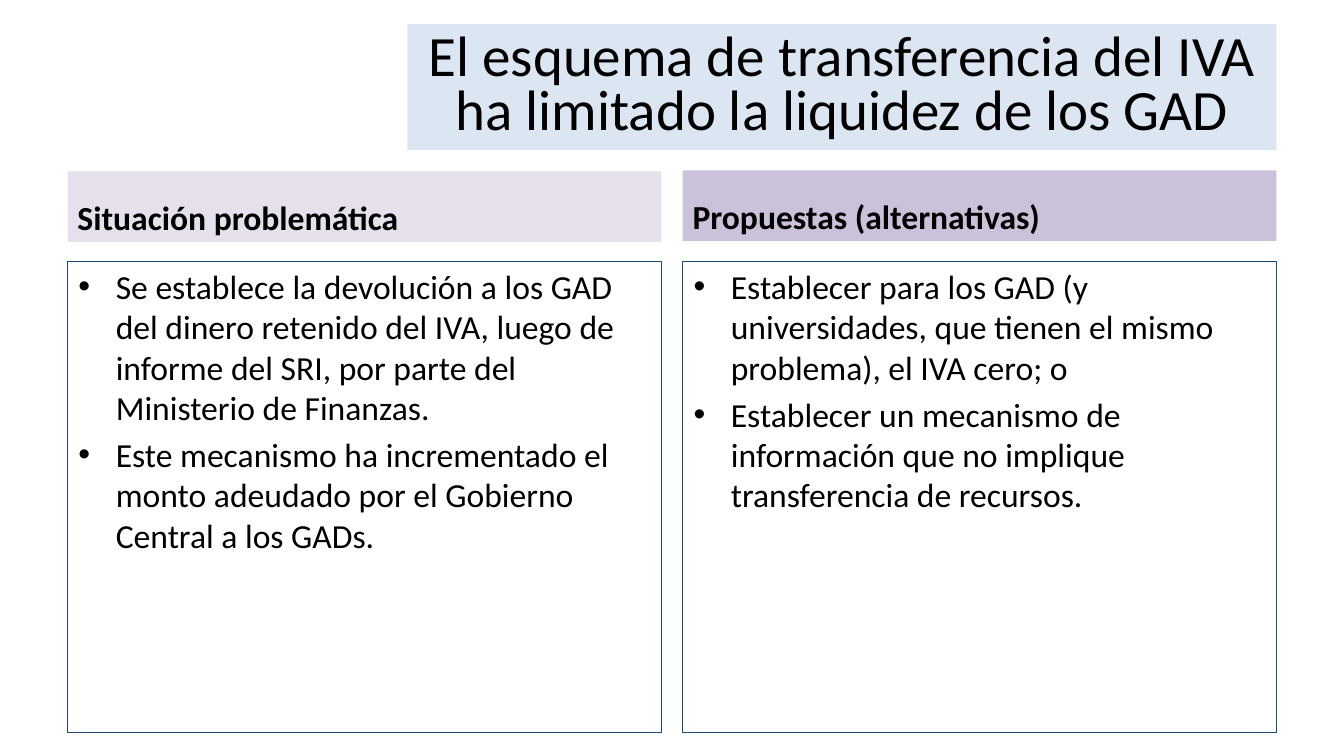
import pptx
import pptx.util
import pptx.dml.color
import pptx.enum.shapes
import pptx.enum.text
import lxml.etree
from dataclasses import dataclass

Inches = pptx.util.Inches
Pt = pptx.util.Pt
RGB = pptx.dml.color.RGBColor.from_string
Anchor = pptx.enum.text.MSO_ANCHOR
Align = pptx.enum.text.PP_ALIGN


@dataclass(frozen=True)
class Theme:
    font: str = "Calibri"
    text: str = "000000"
    title_fill: str = "DCE6F2"
    problem_fill: str = "E6E0EC"
    proposal_fill: str = "CCC1DA"
    border: str = "1F497D"
    title_size: float = 40.7
    body_size: float = 24
    gap: float = 4.8


class SlideBuilder:
    def __init__(self, slide, theme):
        self.s = slide
        self.theme = theme

    def run(self, p, text, size, bold=False):
        r = p.add_run()
        r.text = text
        r.font.name = self.theme.font
        r.font.size = Pt(size)
        r.font.bold = bold
        r.font.color.rgb = RGB(self.theme.text)

    def frame(self, sp, anchor):
        tf = sp.text_frame
        tf.word_wrap = True
        tf.auto_size = pptx.enum.text.MSO_AUTO_SIZE.NONE
        tf.vertical_anchor = anchor
        return tf

    def rectangle(self, left, top, width, height):
        sp = self.s.shapes.add_shape(
            pptx.enum.shapes.MSO_SHAPE.RECTANGLE,
            Inches(left), Inches(top), Inches(width), Inches(height))
        sp.shadow.inherit = False
        return sp

    def title(self, text, left, top, width, height):
        sp = self.s.shapes.title
        sp.left, sp.top = Inches(left), Inches(top)
        sp.width, sp.height = Inches(width), Inches(height)
        sp.fill.solid()
        sp.fill.fore_color.rgb = RGB(self.theme.title_fill)
        p = self.frame(sp, Anchor.MIDDLE).paragraphs[0]
        p.alignment = Align.CENTER
        p.line_spacing = 0.8
        self.run(p, text, self.theme.title_size)

    def heading(self, text, fill, left, top, width, height):
        sp = self.rectangle(left, top, width, height)
        sp.fill.solid()
        sp.fill.fore_color.rgb = RGB(fill)
        sp.line.fill.background()
        p = self.frame(sp, Anchor.BOTTOM).paragraphs[0]
        p.alignment = Align.LEFT
        self.run(p, text, self.theme.body_size, bold=True)

    def bullet(self, p):
        pPr = p._p.get_or_add_pPr()
        pPr.set("marL", str(Inches(0.38)))
        pPr.set("indent", str(Inches(-0.37)))
        ns = pptx.oxml.ns.qn
        font = lxml.etree.SubElement(pPr, ns("a:buFont"))
        font.set("typeface", "Arial")
        char = lxml.etree.SubElement(pPr, ns("a:buChar"))
        char.set("char", "•")

    def bullet_box(self, items, left, top, width, height):
        sp = self.rectangle(left, top, width, height)
        sp.fill.background()
        sp.line.color.rgb = RGB(self.theme.border)
        sp.line.width = Pt(0.75)
        tf = self.frame(sp, Anchor.TOP)
        for i, item in enumerate(items):
            p = tf.add_paragraph() if i else tf.paragraphs[0]
            self.bullet(p)
            p.alignment = Align.LEFT
            if i:
                p.space_before = Pt(self.theme.gap)
            self.run(p, item, self.theme.body_size)


def main():
    prs = pptx.Presentation()
    prs.slide_width, prs.slide_height = Inches(13.33), Inches(7.5)
    theme = Theme()
    slide = SlideBuilder(prs.slides.add_slide(prs.slide_layouts[5]), theme)
    slide.title(
        "El esquema de transferencia del IVA ha limitado la liquidez de los GAD",
        4.04, 0.24, 8.62, 1.25)
    columns = [
        ("Situación problemática", theme.problem_fill, 0.67, 1.7, [
            "Se establece la devolución a los GAD del dinero retenido del IVA, "
            "luego de informe del SRI, por parte del Ministerio de Finanzas.",
            "Este mecanismo ha incrementado el monto adeudado por el Gobierno "
            "Central a los GADs."]),
        ("Propuestas (alternativas)", theme.proposal_fill, 6.77, 1.69, [
            "Establecer para los GAD (y universidades, que tienen el mismo "
            "problema), el IVA cero; o",
            "Establecer un mecanismo de información que no implique "
            "transferencia de recursos."]),
    ]
    for heading, fill, left, top, items in columns:
        slide.heading(heading, fill, left, top, 5.89, 0.7)
        slide.bullet_box(items, left, 2.59, 5.89, 4.68)
    prs.save("out.pptx")


if __name__ == "__main__":
    main()
